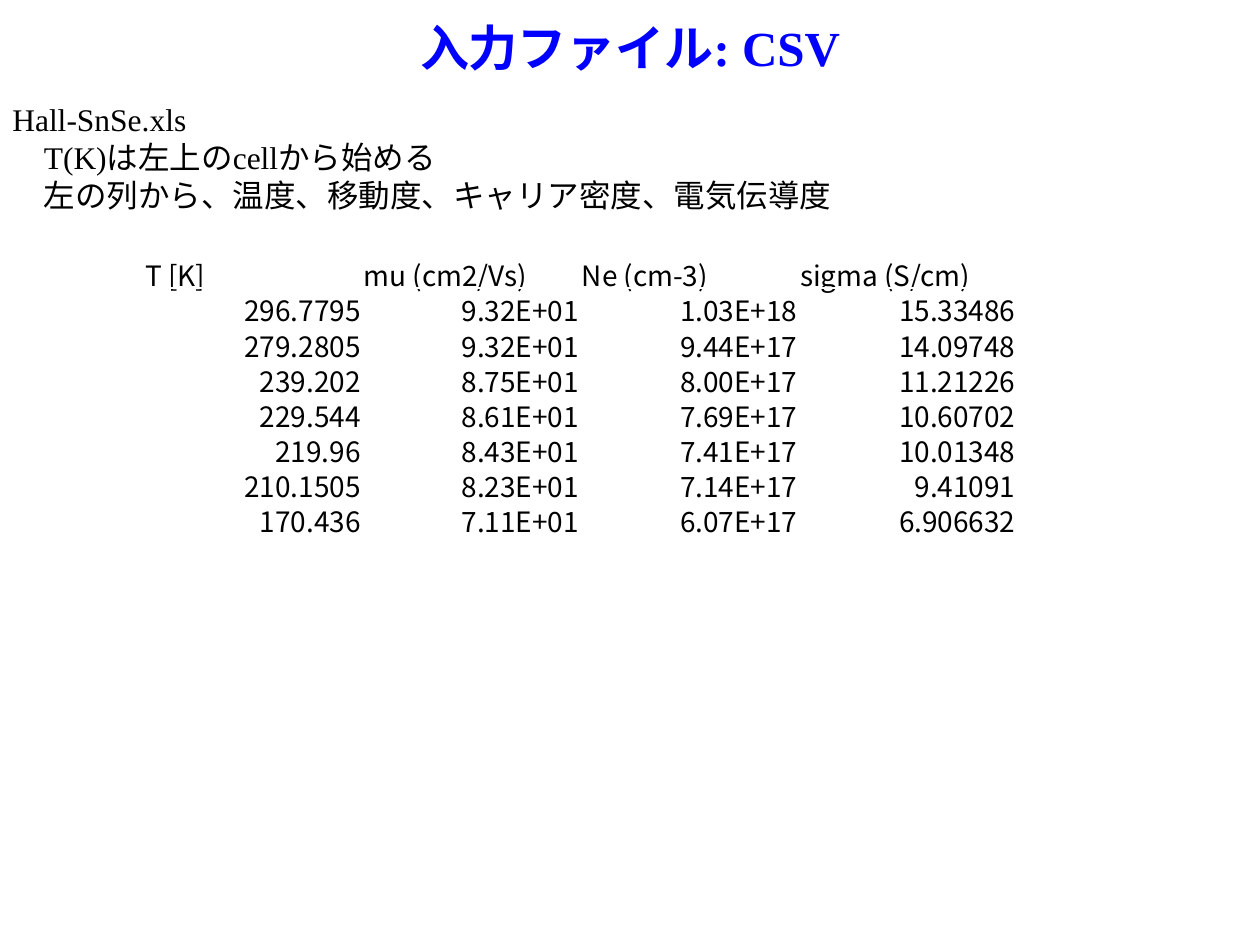
import dataclasses
import pptx
import pptx.dml.color
import pptx.enum.text
import pptx.util
import lxml.etree

Cm, Pt = pptx.util.Cm, pptx.util.Pt
Align = pptx.enum.text.PP_ALIGN
Anchor = pptx.enum.text.MSO_ANCHOR
Color = pptx.dml.color.RGBColor


@dataclasses.dataclass(frozen=True)
class Theme:
    serif: str = "Times New Roman"
    sans: str = "Noto Sans CJK JP"
    blue: str = "0000FF"
    black: str = "000000"
    head: int = 28
    body: int = 18
    cell: int = 16


class Deck:
    def __init__(self, show, theme):
        self.theme = theme
        self.slide = show.slides.add_slide(show.slide_layouts[5])

    def style(self, para, face, size, color, bold=False, align=Align.LEFT):
        para.alignment = align
        font = para.font
        font.name, font.size, font.bold = face, Pt(size), bold
        font.color.rgb = Color.from_string(color)
        # Japanese glyphs take the sans face
        latin = font._element.find(pptx.oxml.ns.qn("a:latin"))
        east = lxml.etree.Element(pptx.oxml.ns.qn("a:ea"), typeface=self.theme.sans)
        latin.addnext(east)

    def title(self, text, left, top, width, height):
        shape = self.slide.shapes.title
        shape.left, shape.top, shape.width, shape.height = left, top, width, height
        frame = shape.text_frame
        frame.text = text
        frame.vertical_anchor = Anchor.MIDDLE
        look = self.theme
        self.style(frame.paragraphs[0], look.serif, look.head, look.blue,
                   bold=True, align=Align.CENTER)

    def text(self, lines, left, top, width, height):
        frame = self.slide.shapes.add_textbox(left, top, width, height).text_frame
        frame.word_wrap = True
        frame.auto_size = pptx.enum.text.MSO_AUTO_SIZE.SHAPE_TO_FIT_TEXT
        frame.text = "\n".join(lines)
        look = self.theme
        for para in frame.paragraphs:
            self.style(para, look.serif, look.body, look.black)

    def table(self, rows, left, top, width, height):
        grid = self.slide.shapes.add_table(
            len(rows), len(rows[0]), left, top, width, height).table
        grid.first_row = grid.horz_banding = False
        look = self.theme
        for r, row in enumerate(rows):
            for c, value in enumerate(row):
                cell = grid.cell(r, c)
                cell.text = value
                cell.fill.background()
                cell.vertical_anchor = Anchor.MIDDLE
                cell.margin_left = cell.margin_right = cell.margin_top = Cm(0.03)
                cell.margin_bottom = 0
                self.style(cell.text_frame.paragraphs[0], look.sans, look.cell,
                           look.black, align=Align.RIGHT if r else Align.LEFT)


NOTES = [
    "Hall-SnSe.xls",
    "　T(K)は左上のcellから始める",
    "　左の列から、温度、移動度、キャリア密度、電気伝導度",
]
DATA = [
    ("T [K]", "mu (cm2/Vs)", "Ne (cm-3)", "sigma (S/cm)"),
    ("296.7795", "9.32E+01", "1.03E+18", "15.33486"),
    ("279.2805", "9.32E+01", "9.44E+17", "14.09748"),
    ("239.202", "8.75E+01", "8.00E+17", "11.21226"),
    ("229.544", "8.61E+01", "7.69E+17", "10.60702"),
    ("219.96", "8.43E+01", "7.41E+17", "10.01348"),
    ("210.1505", "8.23E+01", "7.14E+17", "9.41091"),
    ("170.436", "7.11E+01", "6.07E+17", "6.906632"),
]


def main():
    show = pptx.Presentation()
    show.slide_width, show.slide_height = Cm(25.4), Cm(19.05)
    deck = Deck(show, Theme())
    # Heading
    deck.title("入力ファイル: CSV", 0, 0, Cm(25.4), Cm(1.9))
    # File layout rules
    deck.text(NOTES, 0, Cm(1.9), Cm(25), Cm(2.57))
    # Sample data
    deck.table(DATA, Cm(2.9), Cm(5.1), Cm(17.6), Cm(5.64))
    show.save("out.pptx")


if __name__ == "__main__":
    main()
